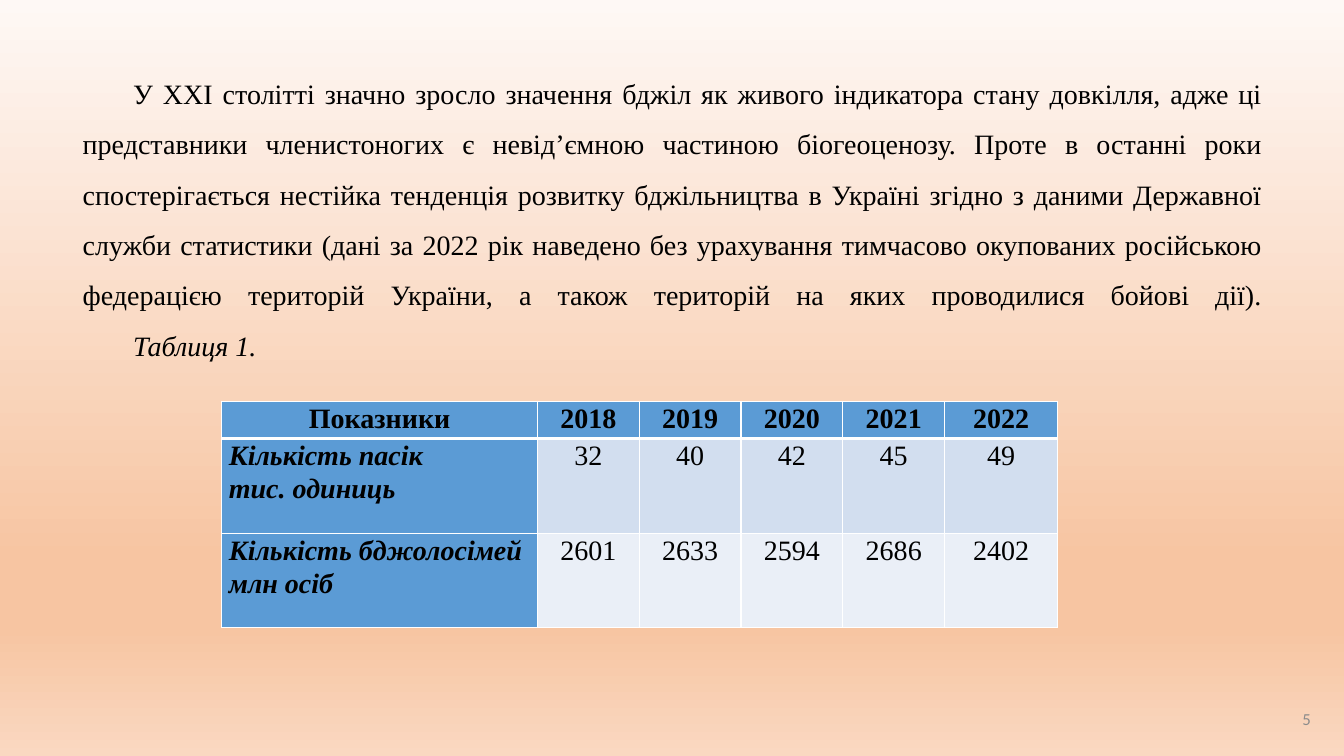
from lxml import etree
from pptx import Presentation
from pptx.dml.color import RGBColor
from pptx.enum.text import MSO_ANCHOR, MSO_AUTO_SIZE, PP_ALIGN
from pptx.oxml.ns import qn
from pptx.util import Inches, Pt

LEFT, CENTER, RIGHT, JUSTIFY = PP_ALIGN.LEFT, PP_ALIGN.CENTER, PP_ALIGN.RIGHT, PP_ALIGN.JUSTIFY
TOP, MIDDLE, BOTTOM = MSO_ANCHOR.TOP, MSO_ANCHOR.MIDDLE, MSO_ANCHOR.BOTTOM
NO_AUTOFIT = MSO_AUTO_SIZE.NONE

COLORS = {
    "text": "000000",
    "number": "8C8C8C",
    "header": "5B9BD5",
    "band_dark": "D2DEEF",
    "band_light": "EAEFF7",
    "border": "FFFFFF",
}
BACKGROUND_STOPS = [(0, "FEF8F5"), (74, "F7C5A2"), (83, "F7C5A2"), (100, "FAD8C1")]


def add_text(paragraph, text, font="Times New Roman", size=20, color="text",
             bold=False, italic=False, align=LEFT, spacing=1.0):
    paragraph.alignment = align
    paragraph.line_spacing = spacing
    run = paragraph.add_run()
    run.text = text
    run.font.name = font
    run.font.size = Pt(size)
    run.font.bold = bold
    run.font.italic = italic
    run.font.color.rgb = RGBColor.from_string(COLORS[color])


def set_border(cell, side, width):
    line = etree.Element(qn(f"a:{side}"), w=str(Pt(width)))
    fill = etree.SubElement(line, qn("a:solidFill"))
    etree.SubElement(fill, qn("a:srgbClr"), val=COLORS["border"])
    properties = cell._tc.get_or_add_tcPr()
    properties.insert(len(properties.findall("*")), line)


presentation = Presentation()
presentation.slide_width = Inches(13.33)
presentation.slide_height = Inches(7.5)
slide = presentation.slides.add_slide(presentation.slide_layouts[5])

background = slide.background.fill
background.gradient()
background.gradient_angle = 270
stop_list = slide.element.find(".//" + qn("a:gsLst"))
for stop in list(stop_list):
    stop_list.remove(stop)
for position, color in BACKGROUND_STOPS:
    stop = etree.SubElement(stop_list, qn("a:gs"), pos=str(position * 1000))
    etree.SubElement(stop, qn("a:srgbClr"), val=color)

title = slide.shapes.title
title.left, title.top = Inches(0.72), Inches(0.49)
title.width, title.height = Inches(11.9), Inches(3.15)
title_frame = title.text_frame
title_frame.word_wrap = True
title_frame.auto_size = NO_AUTOFIT
title_frame.vertical_anchor = BOTTOM
introduction = title_frame.paragraphs[0]
add_text(
    introduction,
    "У ХХІ столітті значно зросло значення бджіл як живого індикатора стану довкілля, "
    "адже ці представники членистоногих є невід’ємною частиною біогеоценозу. "
    "Проте в останні роки спостерігається нестійка тенденція розвитку бджільництва "
    "в Україні згідно з даними Державної служби статистики (дані за 2022 рік наведено "
    "без урахування тимчасово окупованих російською федерацією територій України, "
    "а також територій на яких проводилися бойові дії).",
    align=JUSTIFY, spacing=1.5,
)
introduction.add_line_break()
add_text(introduction, "\tТаблиця 1.", italic=True, align=JUSTIFY, spacing=1.5)
introduction_properties = introduction._p.get_or_add_pPr()
introduction_properties.set("indent", str(Inches(0.5)))
tab_list = etree.SubElement(introduction_properties, qn("a:tabLst"))
etree.SubElement(tab_list, qn("a:tab"), pos=str(Inches(11.44)), algn="r")

table_rows = [
    ("Показники", "2018", "2019", "2020", "2021", "2022"),
    ("Кількість пасік\nтис. одиниць", "32", "40", "42", "45", "49"),
    ("Кількість бджолосімей млн осіб", "2601", "2633", "2594", "2686", "2402"),
]
row_fills = ["header", "band_dark", "band_light"]
column_widths = [3.13, 1.01, 1.01, 1.01, 1.01, 1.12]
row_heights = [0.37, 0.94, 0.94]

table = slide.shapes.add_table(
    len(table_rows), len(column_widths),
    Inches(2.2), Inches(3.98), Inches(8.28), Inches(2.25),
).table
for column, width in zip(table.columns, column_widths):
    column.width = Inches(width)
for row, height in zip(table.rows, row_heights):
    row.height = Inches(height)

for row_index, values in enumerate(table_rows):
    for column_index, value in enumerate(values):
        cell = table.cell(row_index, column_index)
        is_header = row_index == 0
        is_label = column_index == 0
        cell.margin_left = cell.margin_right = Inches(0.07)
        cell.margin_top = cell.margin_bottom = Inches(0)
        cell.vertical_anchor = TOP
        for side in ("lnL", "lnR", "lnT", "lnB"):
            thick = (side == "lnB" and row_index == 0) or (side == "lnT" and row_index == 1)
            set_border(cell, side, 3 if thick else 1)
        cell.fill.solid()
        fill_name = "header" if is_label else row_fills[row_index]
        cell.fill.fore_color.rgb = RGBColor.from_string(COLORS[fill_name])
        for line_index, line in enumerate(value.split("\n")):
            frame = cell.text_frame
            paragraph = frame.add_paragraph() if line_index else frame.paragraphs[0]
            add_text(
                paragraph, line,
                bold=is_header or is_label,
                italic=is_label and not is_header,
                align=LEFT if is_label and not is_header else CENTER,
                spacing=1.07,
            )

number_box = slide.shapes.add_textbox(Inches(12.5), Inches(6.92), Inches(0.6), Inches(0.43))
number_frame = number_box.text_frame
number_frame.word_wrap = True
number_frame.vertical_anchor = MIDDLE
add_text(number_frame.paragraphs[0], "5", font="Calibri", size=12, color="number", align=RIGHT)

presentation.save("out.pptx")
